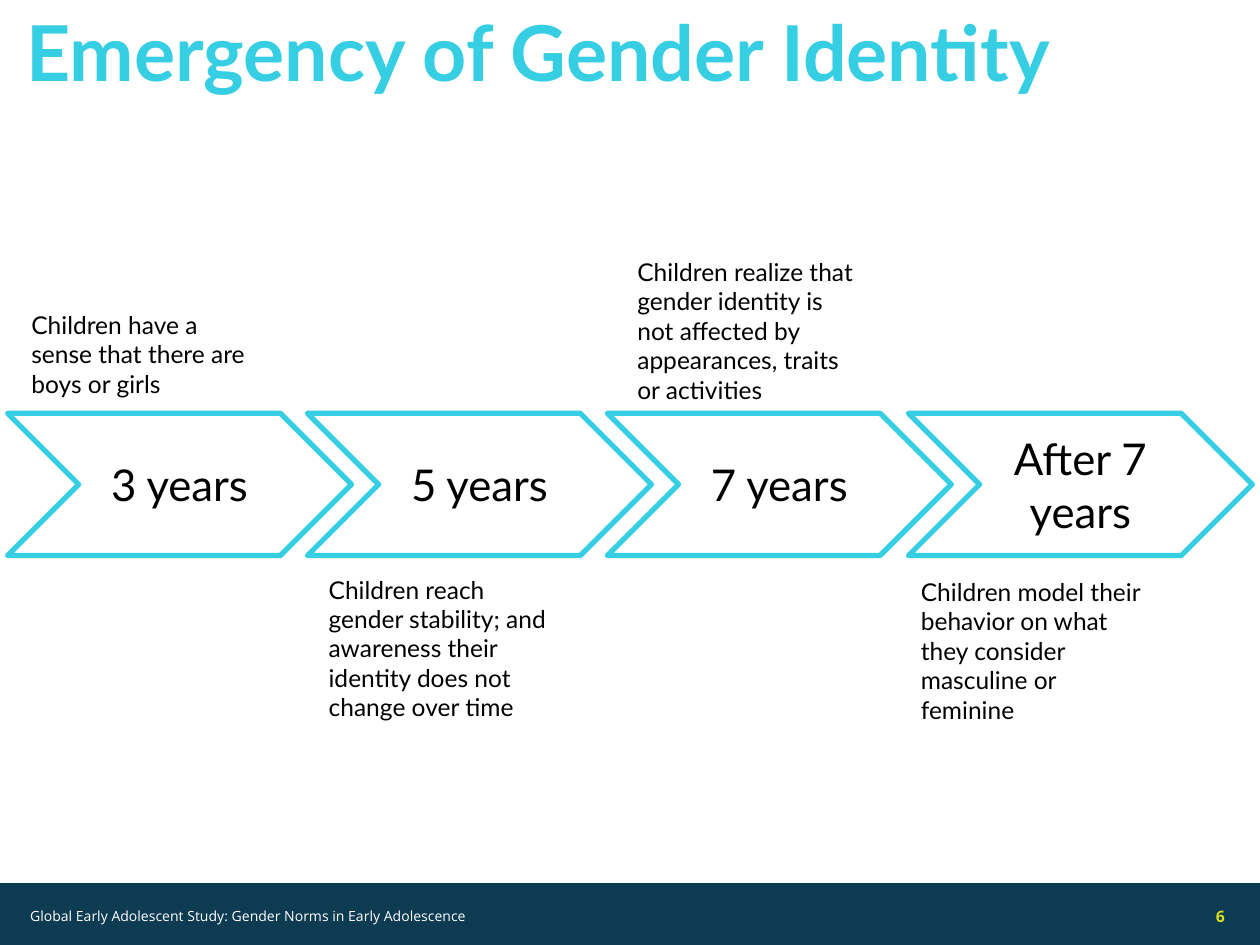
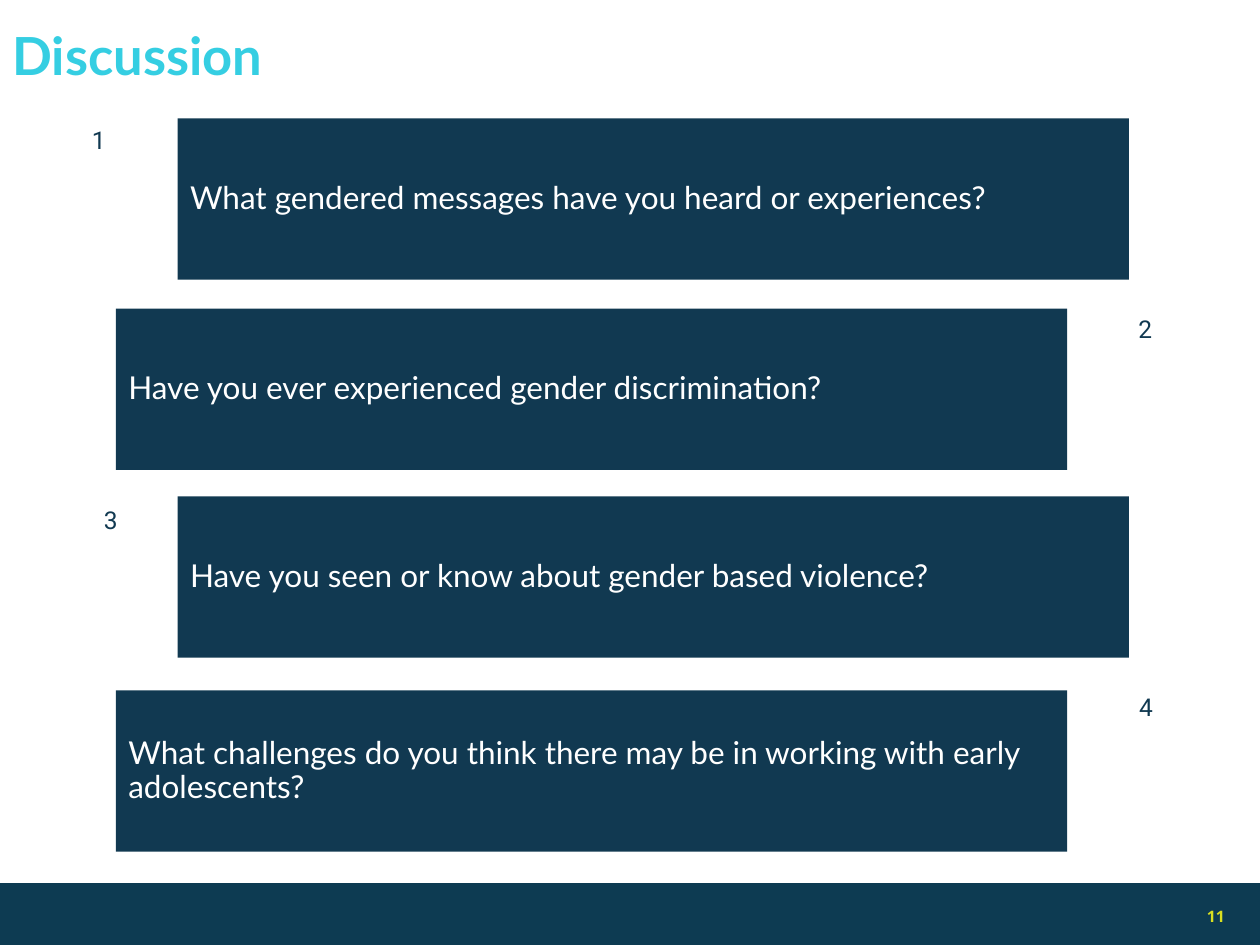
from dataclasses import dataclass

from pptx import Presentation
from pptx.dml.color import RGBColor as Rgb
from pptx.enum.shapes import MSO_SHAPE as Form
from pptx.enum.text import MSO_ANCHOR as Anchor, PP_ALIGN as Align
from pptx.util import Emu, Pt

SCALE = 9144
WIDE, HIGH = 1000, 750


def px(n):
    return Emu(n * SCALE)


@dataclass(frozen=True)
class Theme:
    aqua: str = "35CEE2"
    band: str = "0D3B52"
    navy: str = "113951"
    lime: str = "D9E021"
    white: str = "FFFFFF"
    black: str = "000000"
    sans: str = "Lato"
    small: str = "Open Sans"
    digit: str = "Roboto"
    head: int = 44
    title: int = 30
    age: int = 25
    ask: int = 18
    note: int = 14
    page: int = 9
    foot: int = 8


class Deck:
    def __init__(self, theme):
        self.theme = theme
        self.file = Presentation()
        self.file.slide_width, self.file.slide_height = px(WIDE), px(HIGH)
        self.slide = None

    def page(self, num):
        t = self.theme
        self.slide = self.file.slides.add_slide(self.file.slide_layouts[6])
        self.shape(Form.RECTANGLE, (0, 701, WIDE, 49), fill=t.band)
        self.text((916, 707, 66, 40), num, t.page, t.lime, t.small, bold=True,
                  pad=(10, 5), anchor=Anchor.MIDDLE, para={"alignment": Align.RIGHT})

    def shape(self, form, at, fill=None, line=None):
        item = self.slide.shapes.add_shape(form, *map(px, at))
        item.shadow.inherit = False
        if fill:
            item.fill.solid()
            item.fill.fore_color.rgb = Rgb.from_string(fill)
        else:
            item.fill.background()
        if line:
            item.line.color.rgb = Rgb.from_string(line)
            item.line.width = Pt(3)
        else:
            item.line.fill.background()
        return item

    def label(self, item, words, size, color, font=None, bold=False,
              pad=(10, 10), anchor=Anchor.TOP, para=None):
        frame = item.text_frame
        side, end = map(px, pad)
        look = {"word_wrap": True, "vertical_anchor": anchor,
                "margin_left": side, "margin_right": side,
                "margin_top": end, "margin_bottom": end}
        line = frame.paragraphs[0]
        run = line.add_run()
        run.text = words
        face = {"name": font or self.theme.sans, "size": Pt(size), "bold": bold}
        rows = {"alignment": Align.LEFT} | (para or {})
        for goal, form in ((frame, look), (line, rows), (run.font, face)):
            for key, value in form.items():
                setattr(goal, key, value)
        run.font.color.rgb = Rgb.from_string(color)

    def text(self, at, *args, **form):
        self.label(self.slide.shapes.add_textbox(*map(px, at)), *args, **form)

    def title(self, at, words, size, space, **form):
        self.text(at, words, size, self.theme.aqua, bold=True,
                  para={"line_spacing": space}, **form)

    def arrow(self, at, words):
        t = self.theme
        item = self.shape(Form.CHEVRON, at, line=t.aqua)
        item.adjustments[0] = 0.5
        self.label(item, words, t.age, t.black, anchor=Anchor.MIDDLE,
                   para={"alignment": Align.CENTER})

    def panel(self, at, words, lead):
        t = self.theme
        self.label(self.shape(Form.RECTANGLE, at, fill=t.navy), words, t.ask, t.white,
                   anchor=Anchor.MIDDLE,
                   para={"line_spacing": 0.9, "space_before": Pt(lead),
                         "space_after": Pt(10)})


def ages(deck):
    t = deck.theme
    deck.page("6")
    deck.title((21, 31, 957, 72), "Emergency of Gender Identity", t.head, 0.58, pad=(0, 0))
    deck.text((14, 701, 401, 52),
              "Global Early Adolescent Study: Gender Norms in Early Adolescence",
              t.foot, t.white, t.small, anchor=Anchor.MIDDLE)
    steps = (
        ("3 years", 15, 236, 79, "Children have a sense that there are boys or girls"),
        ("5 years", 251, 446, 79, "Children reach gender stability; and awareness "
                                  "their identity does not change over time"),
        ("7 years", 496, 194, 129, "Children realize that gender identity is not "
                                   "affected by appearances, traits or activities"),
        ("After 7 years", 721, 448, 79, "Children model their behavior on what they "
                                        "consider masculine or feminine"),
    )
    for i, (age, left, top, high, note) in enumerate(steps):
        deck.arrow((6 + 715 * i // 3, 328, 273, 113), age)
        deck.text((left, top, 199, high), note, t.note, t.black)


def talk(deck):
    t = deck.theme
    deck.page("11")
    deck.title((0, 0, 759, 109), "Discussion", t.title, 0.35, anchor=Anchor.MIDDLE)
    asks = (
        (94, (50, 94, 57, 128), "What gendered messages have you heard or experiences?"),
        (245, (871, 244, 76, 127), "Have you ever experienced gender discrimination?"),
        (394, (50, 396, 76, 129), "Have you seen or know about gender based violence?"),
        (548, (869, 544, 81, 125), "What challenges do you think there may be in "
                                   "working with early adolescents?"),
    )
    for i, (top, spot, ask) in enumerate(asks):
        deck.panel((92 if i % 2 else 141, top, 755, 128), ask, 7.5 if i else 3.8)
        deck.text(spot, str(i + 1), t.note, t.navy, t.digit, pad=(10, 5),
                  para={"alignment": Align.CENTER})


def main():
    deck = Deck(Theme())
    ages(deck)
    talk(deck)
    deck.file.save("out.pptx")


if __name__ == "__main__":
    main()
